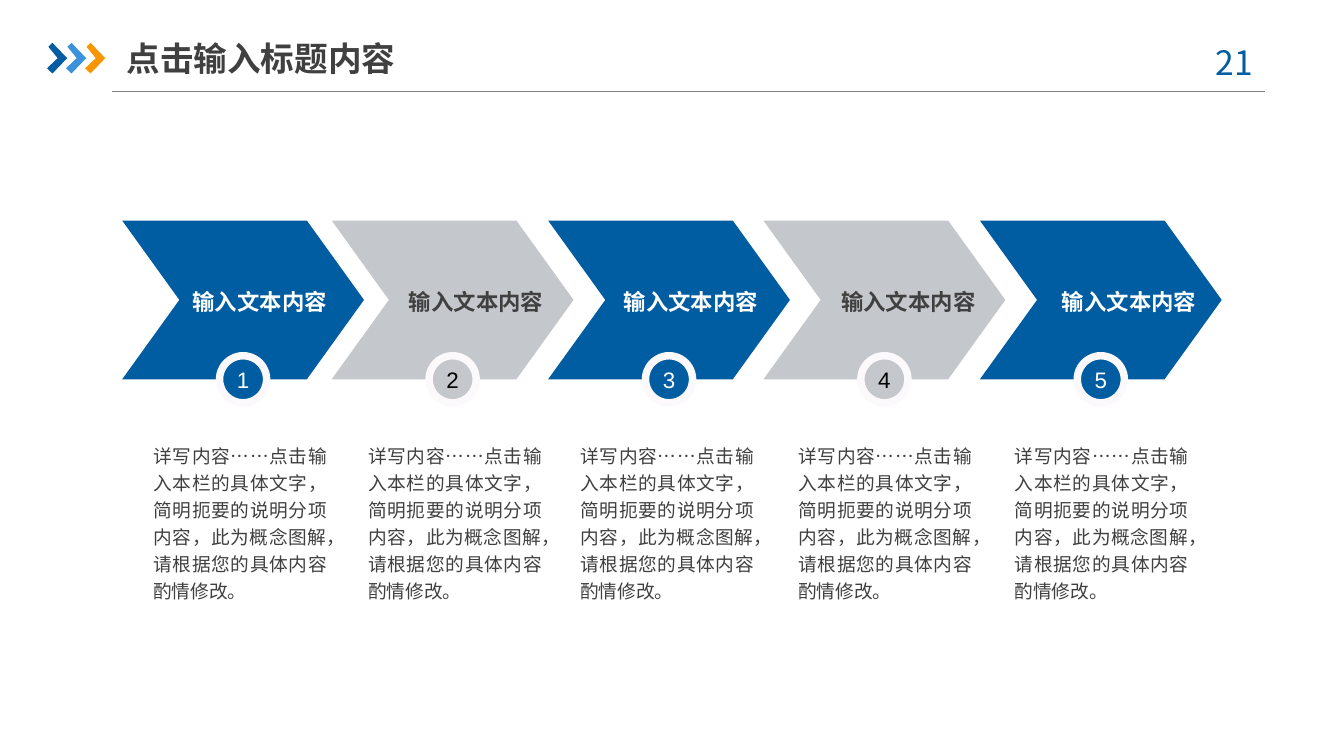
from lxml.etree import SubElement
from pptx import Presentation
from pptx.dml.color import RGBColor
from pptx.enum.shapes import MSO_CONNECTOR, MSO_SHAPE
from pptx.enum.text import MSO_ANCHOR, MSO_AUTO_SIZE, PP_ALIGN
from pptx.oxml.ns import qn
from pptx.util import Cm, Pt

BLUE = RGBColor(0x00, 0x5D, 0xA2)
SKY = RGBColor(0x39, 0x92, 0xDB)
ORANGE = RGBColor(0xF7, 0x96, 0x00)
SILVER = RGBColor(0xC4, 0xC7, 0xCB)
GRAY = RGBColor(0x80, 0x80, 0x80)
DARK = RGBColor(0x40, 0x40, 0x40)
BLACK = RGBColor(0x00, 0x00, 0x00)
WHITE = RGBColor(0xFF, 0xFF, 0xFF)
PEARL = RGBColor(0xFB, 0xF9, 0xFC)

HAN = "Noto Sans CJK SC"
LABEL = "输入文本内容"
NOTE = "详写内容……点击输入本栏的具体文字，简明扼要的说明分项内容，此为概念图解，请根据您的具体内容酌情修改。"

STEPS = [
    (2.31, 2.6, 0.59),
    (6.27, 2.73, 0.69),
    (10.36, 2.7, 0.61),
    (14.43, 2.74, 0.66),
    (18.52, 2.82, 0.66),
]


def write(shape, text, size, color, align, bold=False, font=HAN,
          pad=0, anchor=MSO_ANCHOR.MIDDLE):
    frame = shape.text_frame
    frame.text = text
    frame.word_wrap = True
    frame.auto_size = MSO_AUTO_SIZE.NONE
    frame.vertical_anchor = anchor
    frame.margin_left = frame.margin_right = 0
    frame.margin_top = frame.margin_bottom = Cm(pad)
    line = frame.paragraphs[0]
    line.alignment = align
    for run in line.runs:
        run.font.size = Pt(size)
        run.font.bold = bold
        run.font.color.rgb = color
        run.font.name = font
        SubElement(run.font._element, qn("a:ea")).set("typeface", font)
    return line


def paint(shape, color):
    shape.shadow.inherit = False
    shape.fill.solid()
    shape.fill.fore_color.rgb = color
    shape.line.fill.background()


def add_mark(slide, left, top, width, height, color):
    spots = [(0.07, 0.13), (0.27, 0), (1, 0.5), (0.27, 1), (0, 0.83), (0.53, 0.5)]
    dots = [(Cm(left + x * width), Cm(top + y * height)) for x, y in spots]
    pen = slide.shapes.build_freeform(*dots[0])
    pen.add_line_segments(dots[1:], close=True)
    paint(pen.convert_to_shape(), color)


def add_header(slide, left, top, width):
    for i, color in enumerate((BLUE, SKY, ORANGE)):
        add_mark(slide, left + 0.36 * i, top + 0.25, 0.38, 0.58, color)

    rule = slide.shapes.add_connector(
        MSO_CONNECTOR.STRAIGHT, Cm(left + 1.22), Cm(top + 1.17),
        Cm(left + width), Cm(top + 1.17))
    rule.line.color.rgb = GRAY
    rule.line.width = Pt(0.75)
    SubElement(rule._element.spPr, qn("a:effectLst"))

    title = slide.shapes.title
    title.left, title.top = Cm(left + 1.5), Cm(top)
    title.width, title.height = Cm(5.92), Cm(1.07)
    write(title, "点击输入标题内容", 18, DARK, PP_ALIGN.LEFT, True, pad=0.13)

    page = slide.shapes.add_textbox(
        Cm(left + width - 1.5), Cm(top + 0.1), Cm(1.85), Cm(1.02))
    page.left -= Cm(0)
    write(page, "21", 18, BLUE, PP_ALIGN.CENTER, pad=0.13, anchor=MSO_ANCHOR.TOP)


def add_step(slide, left, top, width, height, count, mid, shift):
    odd = count % 2 == 1
    fill = BLUE if odd else SILVER
    arrow = slide.shapes.add_shape(
        MSO_SHAPE.CHEVRON, Cm(left), Cm(top), Cm(width), Cm(height))
    arrow.adjustments[0] = 0.36
    paint(arrow, fill)

    label = slide.shapes.add_textbox(
        Cm(left + mid - 1.5), Cm(top + height / 2 - 0.2), Cm(3), Cm(0.46))
    write(label, LABEL, 12, WHITE if odd else DARK, PP_ALIGN.CENTER, True)

    size = 0.89
    badge = slide.shapes.add_shape(
        MSO_SHAPE.OVAL, Cm(left + (width - size) / 2),
        Cm(top + height - size / 2), Cm(size), Cm(size))
    paint(badge, fill)
    badge.line.color.rgb = PEARL
    badge.line.width = Pt(4)
    write(badge, str(count), 12, WHITE if odd else BLACK,
          PP_ALIGN.CENTER, font="Arial")

    note = slide.shapes.add_textbox(
        Cm(left + shift), Cm(top + 4.16), Cm(3.28), Cm(3.02))
    line = write(note, NOTE, 10, DARK, PP_ALIGN.JUSTIFY, anchor=MSO_ANCHOR.TOP)
    line.line_spacing = 1.2


def main():
    deck = Presentation()
    deck.slide_width, deck.slide_height = Cm(25.4), Cm(14.29)
    slide = deck.slides.add_slide(deck.slide_layouts[5])
    add_header(slide, 0.89, 0.56, 23.01)
    for count, (left, mid, shift) in enumerate(STEPS, 1):
        add_step(slide, left, 4.17, 4.57, 3, count, mid, shift)
    deck.save("out.pptx")


if __name__ == "__main__":
    main()
